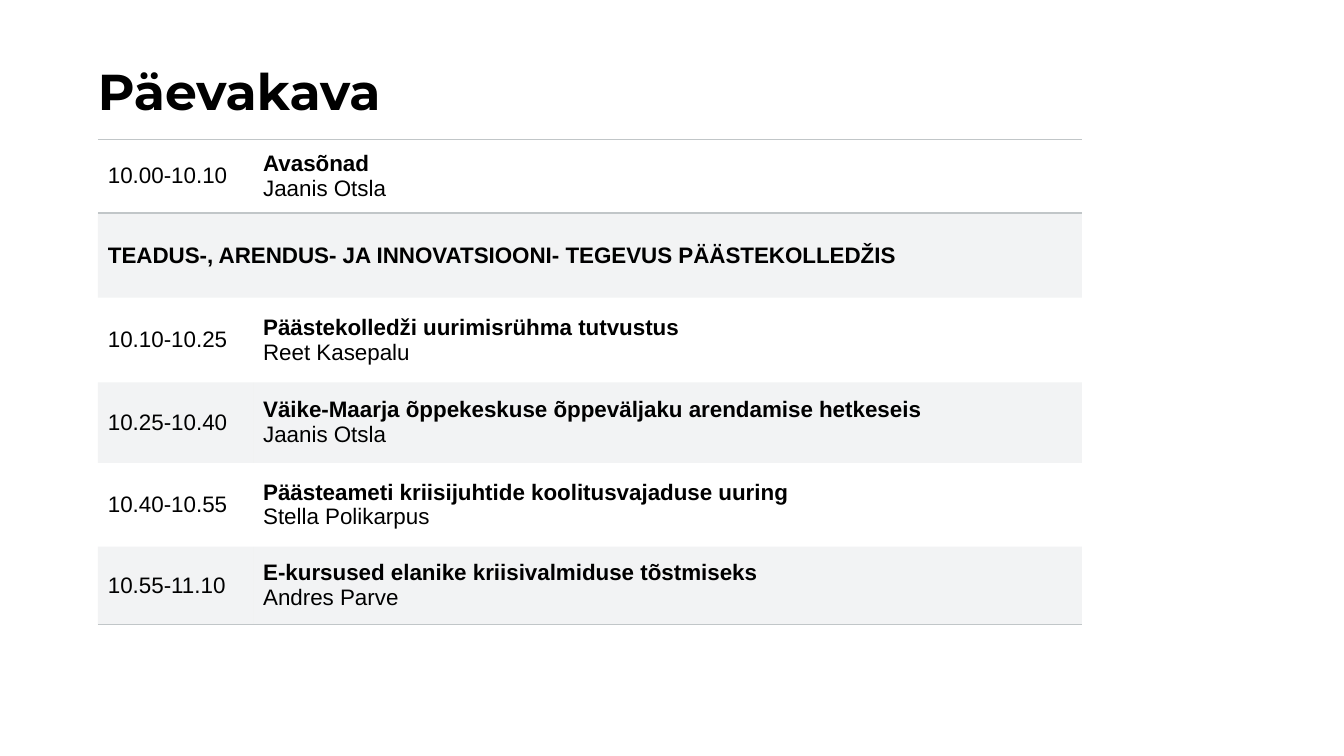
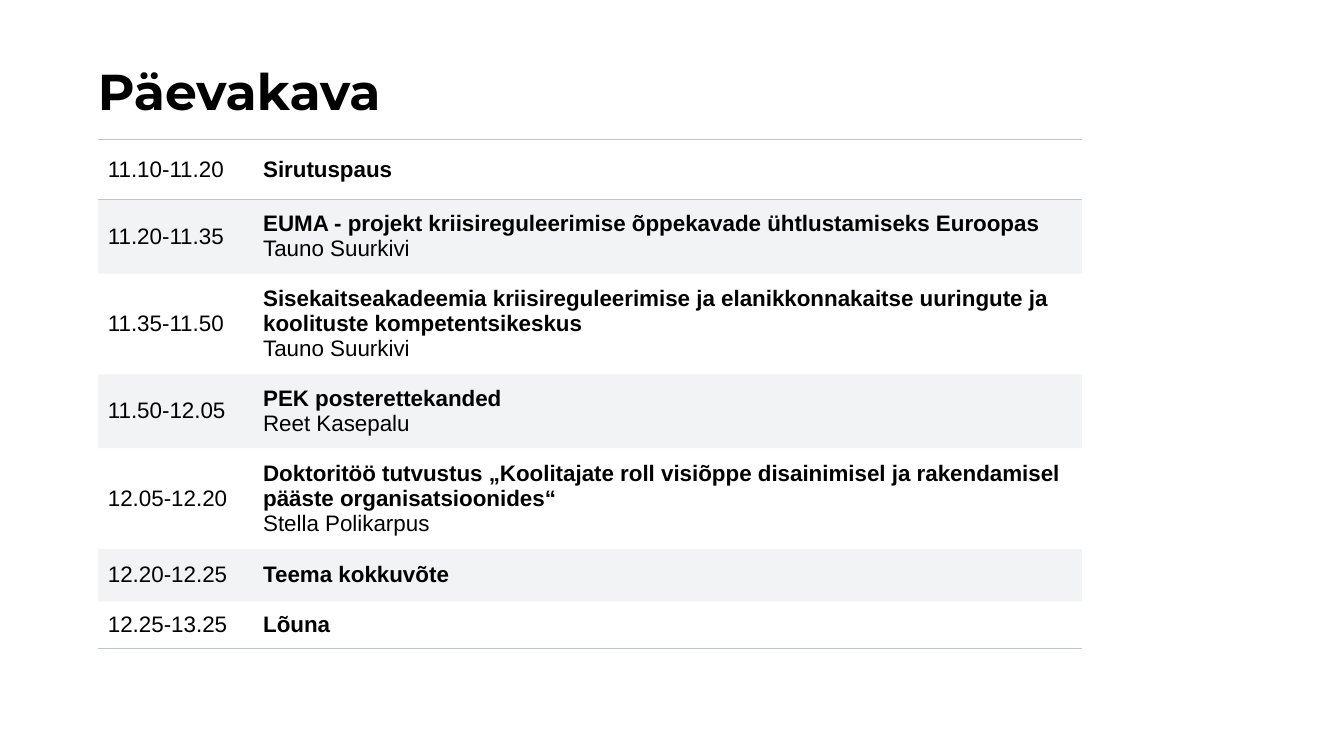
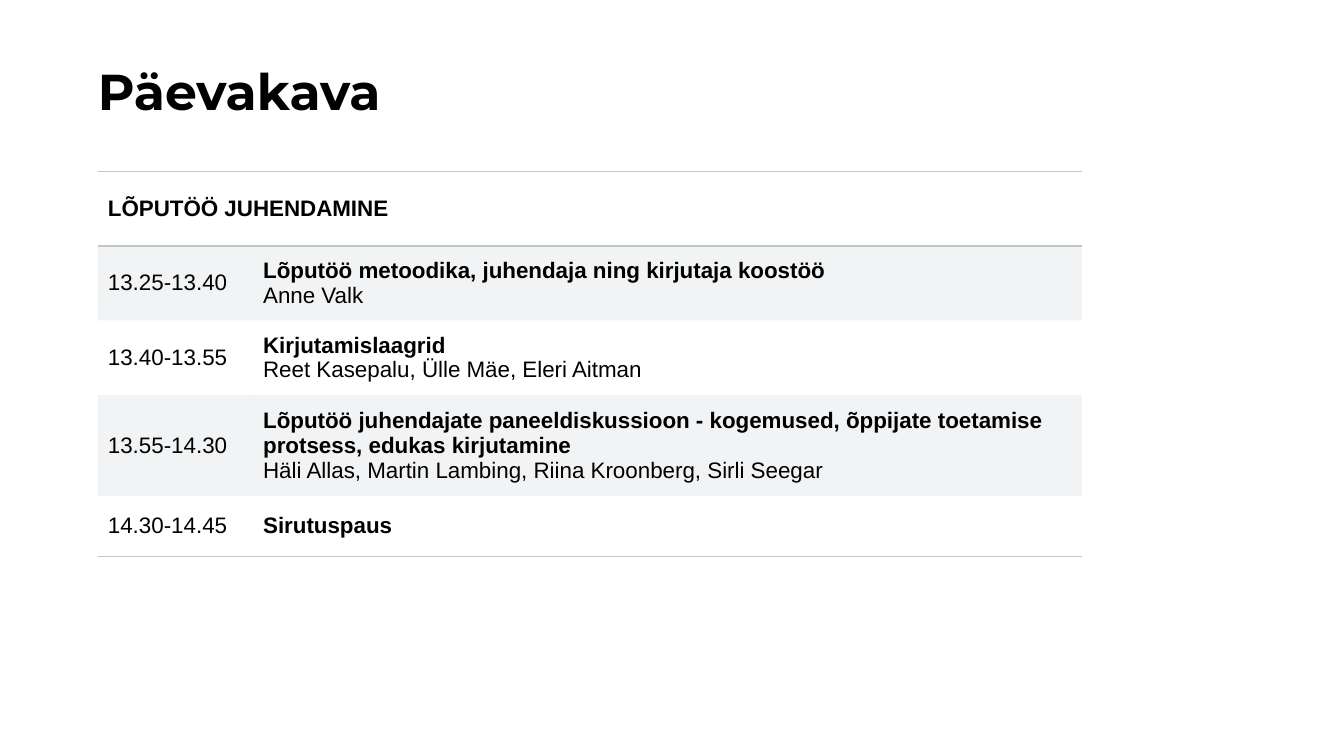
from lxml.etree import SubElement
from pptx import Presentation
from pptx.dml.color import RGBColor
from pptx.enum.text import MSO_ANCHOR as Anchor
from pptx.oxml.ns import qn
from pptx.util import Inches, Pt

INK, GREY = "000000", "C1C6C8"
LEFT, COLS = 0.97, (1.54, 8.22)
PAD = 0.1
PLAIN = "{2D5ABB26-0587-4C30-8999-92F81FD0307C}"

DAYS = [
    (1.38, [
        (0.7, "10.00-10.10", "Avasõnad", "Jaanis Otsla"),
        (0.84, "TEADUS-, ARENDUS- JA INNOVATSIOONI- TEGEVUS PÄÄSTEKOLLEDŽIS"),
        (0.84, "10.10-10.25", "Päästekolledži uurimisrühma tutvustus", "Reet Kasepalu"),
        (0.8, "10.25-10.40", "Väike-Maarja õppekeskuse õppeväljaku arendamise hetkeseis",
         "Jaanis Otsla"),
        (0.83, "10.40-10.55", "Päästeameti kriisijuhtide koolitusvajaduse uuring",
         "Stella Polikarpus"),
        (0.77, "10.55-11.10", "E-kursused elanike kriisivalmiduse tõstmiseks", "Andres Parve"),
    ]),
    (1.38, [
        (0.6, "11.10-11.20", "Sirutuspaus"),
        (0.7, "11.20-11.35",
         "EUMA - projekt kriisireguleerimise õppekavade ühtlustamiseks Euroopas",
         "Tauno Suurkivi"),
        (0.95, "11.35-11.50",
         "Sisekaitseakadeemia kriisireguleerimise ja elanikkonnakaitse uuringute ja "
         "koolituste kompetentsikeskus", "Tauno Suurkivi"),
        (0.7, "11.50-12.05", "PEK posterettekanded", "Reet Kasepalu"),
        (0.95, "12.05-12.20",
         "Doktoritöö tutvustus „Koolitajate roll visiõppe disainimisel ja rakendamisel "
         "pääste organisatsioonides“", "Stella Polikarpus"),
        (0.52, "12.20-12.25", "Teema kokkuvõte"),
        (0.45, "12.25-13.25", "Lõuna"),
    ]),
    (1.7, [
        (0.74, "LÕPUTÖÖ JUHENDAMINE"),
        (0.74, "13.25-13.40", "Lõputöö metoodika, juhendaja ning kirjutaja koostöö", "Anne Valk"),
        (0.74, "13.40-13.55", "Kirjutamislaagrid", "Reet Kasepalu, Ülle Mäe, Eleri Aitman"),
        (0.95, "13.55-14.30",
         "Lõputöö juhendajate paneeldiskussioon - kogemused, õppijate toetamise protsess, "
         "edukas kirjutamine", "Häli Allas, Martin Lambing, Riina Kroonberg, Sirli Seegar"),
        (0.6, "14.30-14.45", "Sirutuspaus"),
    ]),
]


def color(code):
    """Turn a hex string into a colour."""
    return RGBColor.from_string(code)


def style(para, face, size, bold):
    """Set the font of a paragraph."""
    font = para.font
    font.name, font.size, font.bold = face, Pt(size), bold
    font.color.rgb = color(INK)


def title(slide, text):
    """Add the slide title."""
    box = slide.shapes.add_textbox(Inches(LEFT), Inches(0.66), Inches(9.07), Inches(0.7))
    frame = box.text_frame
    frame.word_wrap = True
    frame.margin_left = frame.margin_right = frame.margin_top = frame.margin_bottom = 0
    para = frame.paragraphs[0]
    para.text, para.line_spacing = text, 0.9
    style(para, "Montserrat", 36, True)


def write(cell, lines, bold):
    """Fill a cell with lines, of which only the first may be bold."""
    cell.vertical_anchor = Anchor.MIDDLE
    cell.margin_left = cell.margin_right = Inches(PAD)
    cell.margin_top = cell.margin_bottom = Inches(PAD)
    cell.text = "\n".join(lines)
    for i, para in enumerate(cell.text_frame.paragraphs):
        style(para, "Arial", 16, bold and i == 0)


def rule(cell, side):
    """Draw a thin grey border on one side of a cell."""
    line = SubElement(cell._tc.get_or_add_tcPr(), qn(f"a:{side}"), w=str(Pt(1)))
    SubElement(SubElement(line, qn("a:solidFill")), qn("a:srgbClr"), val=GREY)


def tint(cell, on):
    """Give a cell a light grey fill, or none."""
    if not on:
        cell.fill.background()
        return
    cell.fill.solid()
    cell.fill.fore_color.rgb = color(GREY)
    tone = cell._tc.tcPr.find(".//" + qn("a:solidFill") + "/" + qn("a:srgbClr"))
    SubElement(tone, qn("a:alpha"), val="20000")


def paint(cell, row, last):
    """Add the borders and the band that belong to a row."""
    if row == 0:
        rule(cell, "lnT")
    if row in (0, last):
        rule(cell, "lnB")
    if row % 2 and row == last:
        band = cell._tc.tcPr
        fill = SubElement(band, qn("a:solidFill"))
        SubElement(SubElement(fill, qn("a:srgbClr"), val=GREY), qn("a:alpha"), val="20000")
    else:
        tint(cell, row % 2)


def agenda(slide, top, rows):
    """Add the timetable; a row with one text spans both columns."""
    high = sum(row[0] for row in rows)
    frame = slide.shapes.add_table(len(rows), len(COLS), Inches(LEFT), Inches(top),
                                   Inches(sum(COLS)), Inches(high))
    table = frame.table
    table.first_row = table.horz_banding = False
    frame._element.find(".//" + qn("a:tableStyleId")).text = PLAIN
    for col, wide in zip(table.columns, COLS):
        col.width = Inches(wide)
    for i, (tall, head, *lines) in enumerate(rows):
        table.rows[i].height = Inches(tall)
        time, topic = table.cell(i, 0), table.cell(i, 1)
        write(time, [head], not lines)
        write(topic, lines, True)
        for cell in (time, topic):
            paint(cell, i, len(rows) - 1)
        if not lines:
            time.merge(topic)


def main():
    """Build and save the slides."""
    deck = Presentation()
    deck.slide_width, deck.slide_height = Inches(13.33), Inches(7.5)
    for top, rows in DAYS:
        slide = deck.slides.add_slide(deck.slide_layouts[6])
        title(slide, "Päevakava")
        agenda(slide, top, rows)
    deck.save("out.pptx")


if __name__ == "__main__":
    main()
